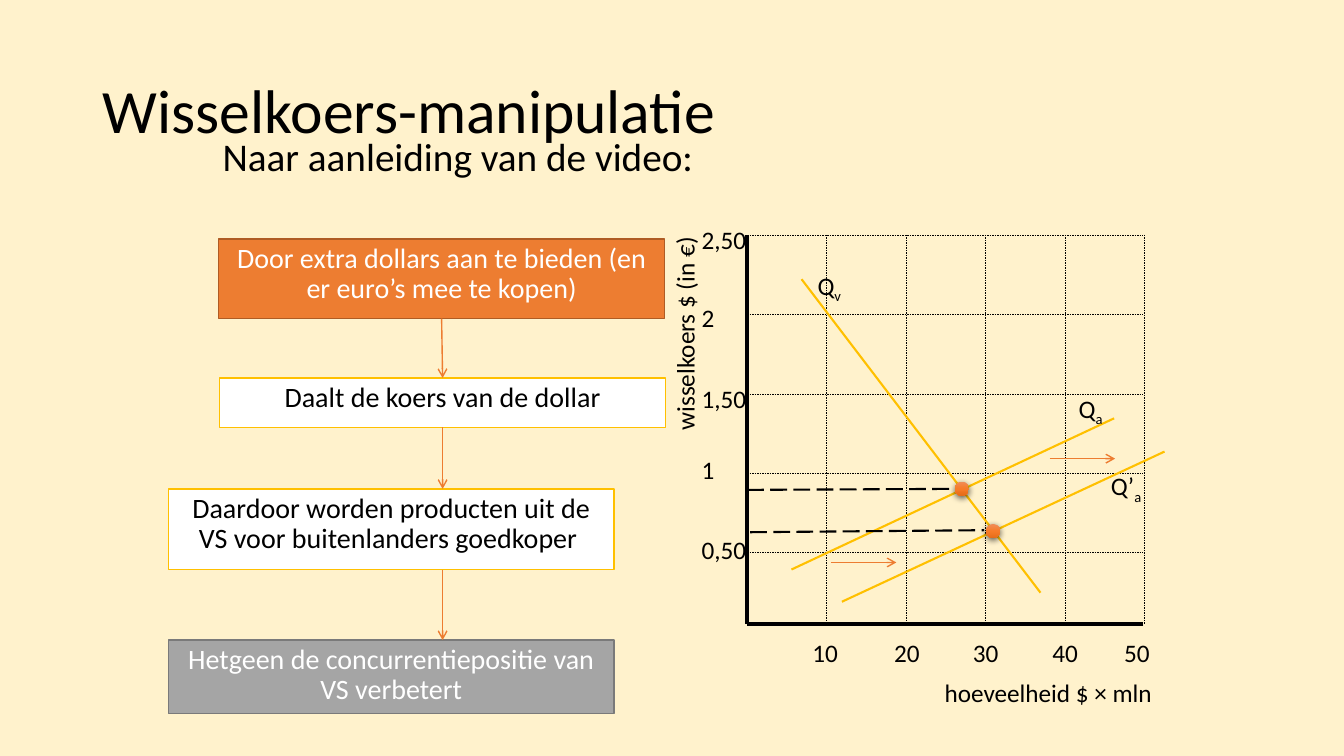
from pptx import Presentation
from pptx.dml.color import RGBColor
from pptx.enum.dml import MSO_LINE_DASH_STYLE as Dash
from pptx.enum.shapes import MSO_CONNECTOR, MSO_SHAPE
from pptx.enum.text import MSO_ANCHOR, MSO_AUTO_SIZE, PP_ALIGN
from pptx.oxml import parse_xml
from pptx.oxml.ns import nsdecls
from pptx.util import Inches, Pt

BLACK, WHITE, ORANGE, GOLD = "000000", "FFFFFF", "ED7D31", "FFC000"
AXIS_LEFT, AXIS_TOP, AXIS_RIGHT, AXIS_BOTTOM = 7.41, 2.33, 11.34, 6.19
GRID_STEP = 0.788
BOTTOM, TOP = 2, 0

FLOW_BOXES = [
    ("Door extra dollars aan te bieden (en er euro’s mee te kopen)",
     2.17, 2.37, 0.79, ORANGE, "AF5C24", WHITE),
    ("Daalt de koers van de dollar", 2.18, 3.75, 0.49, WHITE, GOLD, BLACK),
    ("Daardoor worden producten uit de VS voor buitenlanders goedkoper ",
     1.67, 4.85, 0.8, WHITE, GOLD, BLACK),
    ("Hetgeen de concurrentiepositie van VS verbetert",
     1.67, 6.35, 0.73, "A5A5A5", "7A7A7A", WHITE),
]
PRICE_LABELS = [("2,50", 2.18, 0.65), ("2", 2.95, 0.33), ("1,50", 3.75, 0.65),
                ("1", 4.46, 0.33), ("0,50", 5.25, 0.65)]
QUANTITY_LABELS = [("10", 7.96), ("20", 8.77), ("30", 9.55), ("40", 10.34), ("50", 11.05)]
CURVES = [(7.85, 5.65, 11.05, 4.15), (7.95, 2.77, 10.32, 5.88), (8.35, 5.97, 11.55, 4.48)]
CURVE_LABELS = [("Q", "v", 8.01, 2.63, 0.45), ("Q", "a", 10.6, 3.85, 0.45),
                ("Q’", "a", 10.92, 4.62, 0.51)]
SHIFT_ARROWS = [(10.41, 4.55, 11.06, 4.55), (8.24, 5.58, 8.89, 5.58)]
PRICE_LINES = [(7.41, 4.86, 9.43, 4.85), (7.44, 5.28, 9.76, 5.26)]
EQUILIBRIA = [(9.47, 4.78), (9.78, 5.2)]


def rgb(color):
    return RGBColor.from_string(color)


def add_run(paragraph, text, size=18, color=BLACK, subscript=False):
    run = paragraph.add_run()
    run.text = text
    run.font.name = "Calibri"
    run.font.size = Pt(size)
    run.font.color.rgb = rgb(color)
    if subscript:
        run.font._element.set("baseline", "-25000")


def add_title(slide, text):
    title = slide.shapes.title
    title.left, title.top, title.width, title.height = map(Inches, (0.92, 0.4, 11.5, 1.45))
    frame = title.text_frame
    frame.auto_size = MSO_AUTO_SIZE.NONE
    frame.vertical_anchor = MSO_ANCHOR.MIDDLE
    paragraph = frame.paragraphs[0]
    paragraph.alignment = PP_ALIGN.LEFT
    paragraph.line_spacing = 0.9
    add_run(paragraph, text, size=44)


def add_label(slide, text, left, top, width, height=0.4, size=18, rotation=0, subscript=""):
    box = slide.shapes.add_textbox(*map(Inches, (left, top, width, height)))
    box.rotation = rotation
    box.text_frame.word_wrap = False
    box.text_frame.auto_size = MSO_AUTO_SIZE.SHAPE_TO_FIT_TEXT
    paragraph = box.text_frame.paragraphs[0]
    add_run(paragraph, text, size)
    if subscript:
        add_run(paragraph, subscript, size, subscript=True)


def add_flow_box(slide, text, left, top, height, fill, border, color):
    box = slide.shapes.add_shape(MSO_SHAPE.RECTANGLE, *map(Inches, (left, top, 4.42, height)))
    box.shadow.inherit = False
    box.fill.solid()
    box.fill.fore_color.rgb = rgb(fill)
    box.line.color.rgb = rgb(border)
    box.line.width = Pt(1)
    frame = box.text_frame
    frame.word_wrap = True
    frame.vertical_anchor = MSO_ANCHOR.TOP
    paragraph = frame.paragraphs[0]
    paragraph.alignment = PP_ALIGN.CENTER
    paragraph.line_spacing = 0.9
    add_run(paragraph, text, size=20, color=color)
    return box


def add_line(slide, points, color=BLACK, width=1.0, dash=None, arrow=False):
    line = slide.shapes.add_connector(MSO_CONNECTOR.STRAIGHT, *map(Inches, points))
    line.line.color.rgb = rgb(color)
    line.line.width = Pt(width)
    if dash:
        line.line.dash_style = dash
    if arrow:
        line.line._get_or_add_ln().append(
            parse_xml(f'<a:tailEnd {nsdecls("a")} type="arrow"/>'))
    line._element.spPr.append(parse_xml(f'<a:effectLst {nsdecls("a")}/>'))
    return line


def add_equilibrium(slide, left, top):
    dot = slide.shapes.add_shape(MSO_SHAPE.OVAL, *map(Inches, (left, top, 0.14, 0.14)))
    stops = "".join(
        f'<a:gs pos="{position}"><a:srgbClr val="{color}"/></a:gs>'
        for position, color in ((0, "F18C57"), (50000, "F67B28"), (100000, "E56C19")))
    properties = dot._element.spPr
    properties.append(parse_xml(
        f'<a:gradFill {nsdecls("a")} rotWithShape="1"><a:gsLst>{stops}</a:gsLst>'
        '<a:lin ang="5400000" scaled="0"/></a:gradFill>'))
    dot.line.fill.background()
    properties.append(parse_xml(
        f'<a:effectLst {nsdecls("a")}><a:outerShdw blurRad="{Pt(4.5)}" dist="{Pt(1.5)}" '
        'dir="5400000" algn="ctr" rotWithShape="0"><a:srgbClr val="000000">'
        '<a:alpha val="63000"/></a:srgbClr></a:outerShdw></a:effectLst>'))


def add_flow(slide):
    first, second, *_ = [add_flow_box(slide, *box) for box in FLOW_BOXES]
    arrows = [add_line(slide, points, ORANGE, arrow=True) for points in (
        (4.38, 3.15, 4.39, 3.75), (4.39, 4.24, 4.39, 4.85), (4.39, 5.65, 4.39, 6.35))]
    arrows[0].begin_connect(first, BOTTOM)
    arrows[0].end_connect(second, TOP)
    arrows[1].begin_connect(second, BOTTOM)


def add_axes(slide):
    add_line(slide, (AXIS_LEFT, AXIS_TOP, AXIS_LEFT, AXIS_BOTTOM), width=3)
    add_line(slide, (AXIS_RIGHT, AXIS_BOTTOM, AXIS_LEFT, AXIS_BOTTOM), width=3)
    for index in range(5):
        y = AXIS_TOP + index * GRID_STEP
        x = AXIS_LEFT + (index + 1) * GRID_STEP
        add_line(slide, (AXIS_LEFT, y, AXIS_RIGHT, y), width=0.25, dash=Dash.DASH)
        add_line(slide, (x, AXIS_TOP, x, AXIS_BOTTOM), width=0.25, dash=Dash.DASH)
    add_label(slide, "hoeveelheid $ × mln", 9.27, 6.67, 2.29)
    add_label(slide, "wisselkoers $ (in €)", 5.72, 3.1, 2.14, rotation=270)
    for text, top, width in PRICE_LABELS:
        add_label(slide, text, 6.86, top, width)
    for text, left in QUANTITY_LABELS:
        add_label(slide, text, left, 6.27, 0.46)


def add_curves(slide):
    for points in CURVES:
        add_line(slide, points, GOLD, 1.5)
    for text, subscript, left, top, width in CURVE_LABELS:
        add_label(slide, text, left, top, width, subscript=subscript)
    for points in SHIFT_ARROWS:
        add_line(slide, points, ORANGE, arrow=True)
    for left, top in EQUILIBRIA:
        add_equilibrium(slide, left, top)
    for points in PRICE_LINES:
        add_line(slide, points, width=1.5, dash=Dash.LONG_DASH)


def main():
    presentation = Presentation()
    presentation.slide_width, presentation.slide_height = Inches(13.33), Inches(7.5)
    slide = presentation.slides.add_slide(presentation.slide_layouts[5])
    slide.background.fill.solid()
    slide.background.fill.fore_color.rgb = rgb("FFF2CC")
    add_title(slide, "Wisselkoers-manipulatie")
    add_flow(slide)
    add_axes(slide)
    add_curves(slide)
    add_label(slide, "Naar aanleiding van de video:", 2.11, 1.26, 4.92, 0.57, size=28)
    presentation.save("out.pptx")


if __name__ == "__main__":
    main()
